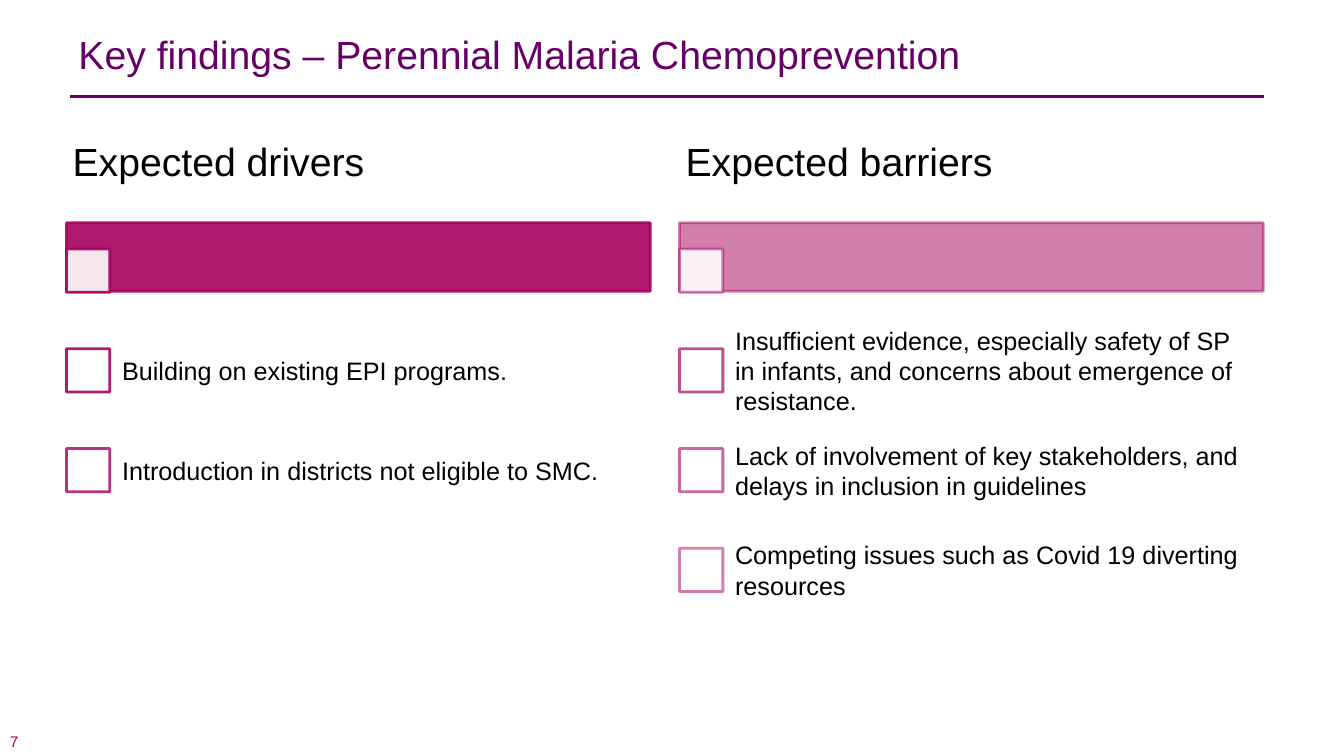
from lxml.etree import SubElement
from pptx import Presentation
from pptx.dml.color import RGBColor
from pptx.enum.shapes import MSO_CONNECTOR, MSO_SHAPE
from pptx.enum.text import MSO_ANCHOR, PP_ALIGN
from pptx.oxml.ns import qn
from pptx.util import Inches, Pt

COLORS = {"magenta": "A7005F", "purple": "660066", "black": "000000", "white": "FFFFFF"}
FONT = "Arial"
COLUMN_WIDTH = 5.79
BOX_SIZE = 0.43
ROW_TOP = 3.18
ROW_HEIGHT = 0.99
COLUMNS = [
    (0.66, "Expected drivers", 90, [
        ("Building on existing EPI programs.", 90),
        ("Introduction in districts not eligible to SMC.", 80),
    ]),
    (6.74, "Expected barriers", 50, [
        ("Insufficient evidence, especially safety of SP in infants, "
         "and concerns about emergence of resistance.", 70),
        ("Lack of involvement of key stakeholders, and delays in inclusion in guidelines", 60),
        ("Competing issues such as Covid 19 diverting resources", 50),
    ]),
]


def set_opacity(fill, percent):
    """Make a solid fill partly transparent."""
    for color in fill._xPr.iter(qn("a:srgbClr")):
        SubElement(color, qn("a:alpha"), val=str(percent * 1000))


def add_rectangle(slide, left, top, width, height, color, fill_opacity, line_opacity):
    """Add a filled rectangle with a magenta outline."""
    shape = slide.shapes.add_shape(
        MSO_SHAPE.RECTANGLE, Inches(left), Inches(top), Inches(width), Inches(height))
    shape.shadow.inherit = False
    shape.fill.solid()
    shape.fill.fore_color.rgb = RGBColor.from_string(COLORS[color])
    set_opacity(shape.fill, fill_opacity)
    shape.line.width = Pt(2)
    shape.line.fill.solid()
    shape.line.color.rgb = RGBColor.from_string(COLORS["magenta"])
    set_opacity(shape.line.fill, line_opacity)


def add_text(slide, text, left, top, width, height, size, color="black",
             margins=(0.1, 0.05), anchor=MSO_ANCHOR.MIDDLE):
    """Add a left-aligned text box and return its paragraph."""
    box = slide.shapes.add_textbox(Inches(left), Inches(top), Inches(width), Inches(height))
    frame = box.text_frame
    frame.word_wrap = True
    frame.vertical_anchor = anchor
    frame.margin_left = frame.margin_right = Inches(margins[0])
    frame.margin_top = frame.margin_bottom = Inches(margins[1])
    frame.text = text
    paragraph = frame.paragraphs[0]
    paragraph.alignment = PP_ALIGN.LEFT
    font = paragraph.runs[0].font
    font.name = FONT
    font.size = Pt(size)
    font.color.rgb = RGBColor.from_string(COLORS[color])
    return paragraph


def add_title(slide, text):
    """Add the slide title and the rule beneath it."""
    paragraph = add_text(slide, text, 0.68, 0.36, 11.97, 0.75, 28, "purple",
                         anchor=MSO_ANCHOR.TOP)
    paragraph.line_spacing = Pt(26)
    rule = slide.shapes.add_connector(
        MSO_CONNECTOR.STRAIGHT, Inches(0.69), Inches(0.96), Inches(12.54), Inches(0.96))
    rule.line.color.rgb = RGBColor.from_string(COLORS["purple"])
    rule.line.width = Pt(2)
    SubElement(rule._element.spPr, qn("a:effectLst"))


def add_column(slide, left, heading, opacity, findings):
    """Add a heading, its bar and one checkbox row per finding."""
    add_rectangle(slide, left, 2.21, COLUMN_WIDTH, 0.68, "magenta", opacity, opacity)
    add_rectangle(slide, left, 2.47, BOX_SIZE, BOX_SIZE, "white", 90, opacity)
    add_text(slide, heading, left, 0.99, COLUMN_WIDTH, 1.22, 28, margins=(0.06, 0.04))
    for row, (finding, line_opacity) in enumerate(findings):
        top = ROW_TOP + row * ROW_HEIGHT
        box_top = top + (ROW_HEIGHT - BOX_SIZE) / 2
        add_rectangle(slide, left, box_top, BOX_SIZE, BOX_SIZE, "white", 100, line_opacity)
        add_text(slide, finding, left + 0.41, top, 5.38, ROW_HEIGHT, 18,
                 margins=(0.14, 0.14))


def main():
    """Build and save the key findings slide."""
    presentation = Presentation()
    presentation.slide_width = Inches(13.33)
    presentation.slide_height = Inches(7.5)
    slide = presentation.slides.add_slide(presentation.slide_layouts[6])
    add_text(slide, "7", 0, 7.26, 1.06, 0.18, 11, "magenta", margins=(0.1, 0))
    add_title(slide, "Key findings – Perennial Malaria Chemoprevention")
    for column in COLUMNS:
        add_column(slide, *column)
    presentation.save("out.pptx")


if __name__ == "__main__":
    main()
